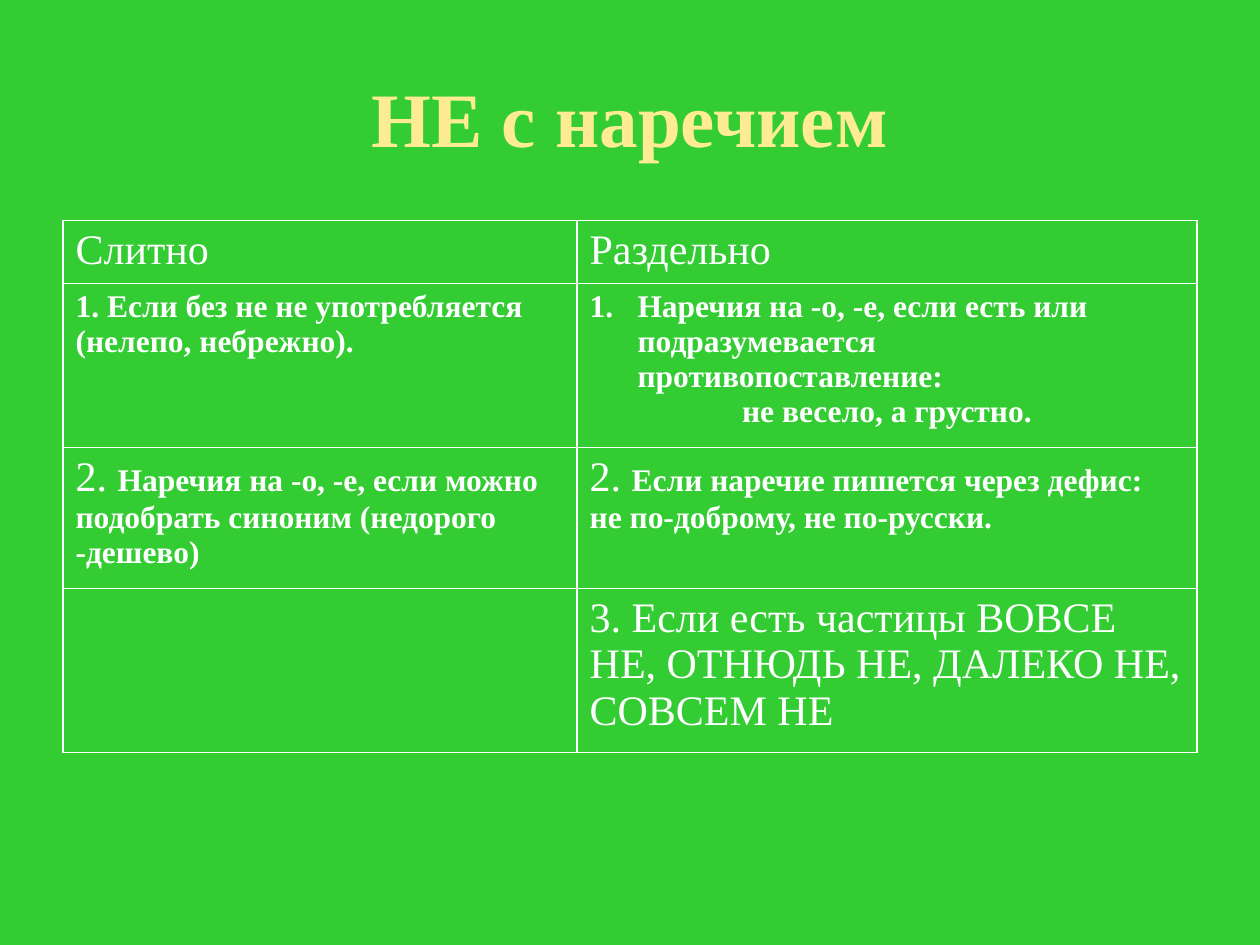
from dataclasses import dataclass
from typing import Optional

from lxml.etree import SubElement
from pptx import Presentation
from pptx.dml.color import RGBColor
from pptx.enum.text import MSO_ANCHOR as Anchor, PP_ALIGN as Align
from pptx.oxml import parse_xml
from pptx.oxml.ns import nsdecls, qn
from pptx.util import Inches, Pt


@dataclass(frozen=True)
class Theme:
    font: str = "Times New Roman"
    background: str = "33CC33"
    title_color: str = "FEEC94"
    text_color: str = "FFFFFF"
    title_size: int = 44
    large_size: int = 24
    rule_size: int = 18
    border_width: int = 1


@dataclass(frozen=True)
class Words:
    text: str
    size: int
    bold: bool = False
    color: str = Theme.text_color


@dataclass(frozen=True)
class Line:
    words: tuple[Words, ...]
    align: Optional[Align] = None
    hanging: bool = False
    numbered: bool = False


THEME = Theme()
HANGING_INDENT = Inches(0.38)
COLUMN_WIDTHS = (4.08, 4.92)
ROW_HEIGHTS = (0.47, 1.21, 1.12, 1.2)


def large(text: str) -> Words:
    return Words(text, THEME.large_size)


def rule(text: str) -> Words:
    return Words(text, THEME.rule_size, bold=True)


TITLE = Line((Words("НЕ с наречием", THEME.title_size, True, THEME.title_color),), Align.CENTER)

# Each cell holds a tuple of lines; "\n" marks a line break inside a line.
RULES = (
    ((Line((large("Слитно"),)),), (Line((large("Раздельно"),)),)),
    (
        (Line((rule("1. Если без не не употребляется (нелепо, небрежно)."),)),),
        (
            Line((rule("Наречия на -о, -е, если есть или подразумевается противопоставление:"),),
                 hanging=True, numbered=True),
            Line((rule("не весело, а грустно."),), Align.CENTER, hanging=True),
        ),
    ),
    (
        (Line((large("2. "),
               rule("Наречия на -о, -е, если можно подобрать синоним (недорого -дешево)"))),),
        (Line((large("2. "),
               rule("Если наречие пишется через дефис:\nне по-доброму, не по-русски."))),),
    ),
    ((), (Line((large("3. Если есть частицы ВОВСЕ НЕ, ОТНЮДЬ НЕ, ДАЛЕКО НЕ, СОВСЕМ НЕ"),)),)),
)


def add_words(paragraph, words: Words) -> None:
    for index, text in enumerate(words.text.split("\n")):
        if index:
            paragraph.add_line_break()
        run = paragraph.add_run()
        run.text = text
        run.font.name = THEME.font
        run.font.size = Pt(words.size)
        run.font.bold = words.bold
        run.font.color.rgb = RGBColor.from_string(words.color)


def write_lines(frame, lines: tuple[Line, ...]) -> None:
    for index, line in enumerate(lines):
        paragraph = frame.add_paragraph() if index else frame.paragraphs[0]
        if line.align is not None:
            paragraph.alignment = line.align
        properties = paragraph._p.get_or_add_pPr()
        if line.hanging:
            properties.set("marL", str(HANGING_INDENT))
            properties.set("indent", str(-HANGING_INDENT))
        if line.numbered:
            SubElement(properties, qn("a:buFontTx"))
            SubElement(properties, qn("a:buAutoNum"), type="arabicPeriod")
        for words in line.words:
            add_words(paragraph, words)


def outline_cell(cell) -> None:
    properties = cell._tc.get_or_add_tcPr()
    for index, side in enumerate(("lnL", "lnR", "lnT", "lnB")):
        properties.insert(index, parse_xml(
            f'<a:{side} {nsdecls("a")} w="{Pt(THEME.border_width)}"><a:solidFill>'
            f'<a:srgbClr val="{THEME.text_color}"/></a:solidFill></a:{side}>'))


def add_title(slide) -> None:
    box = slide.shapes.add_textbox(Inches(0.5), Inches(0.3), Inches(9), Inches(1.25))
    box.text_frame.word_wrap = True
    box.text_frame.vertical_anchor = Anchor.MIDDLE
    write_lines(box.text_frame, (TITLE,))


def add_rules_table(slide) -> None:
    table = slide.shapes.add_table(
        len(ROW_HEIGHTS), len(COLUMN_WIDTHS), Inches(0.5), Inches(1.75),
        Inches(sum(COLUMN_WIDTHS)), Inches(sum(ROW_HEIGHTS))).table
    table.first_row = False
    table.horz_banding = False
    for column, width in zip(table.columns, COLUMN_WIDTHS):
        column.width = Inches(width)
    for row, height, contents in zip(table.rows, ROW_HEIGHTS, RULES):
        row.height = Inches(height)
        for cell, lines in zip(row.cells, contents):
            cell.fill.background()
            outline_cell(cell)
            write_lines(cell.text_frame, lines)


def main() -> None:
    deck = Presentation()
    deck.slide_width, deck.slide_height = Inches(10), Inches(7.5)
    slide = deck.slides.add_slide(deck.slide_layouts[6])
    slide.background.fill.solid()
    slide.background.fill.fore_color.rgb = RGBColor.from_string(THEME.background)
    add_title(slide)
    add_rules_table(slide)
    deck.save("out.pptx")


if __name__ == "__main__":
    main()
